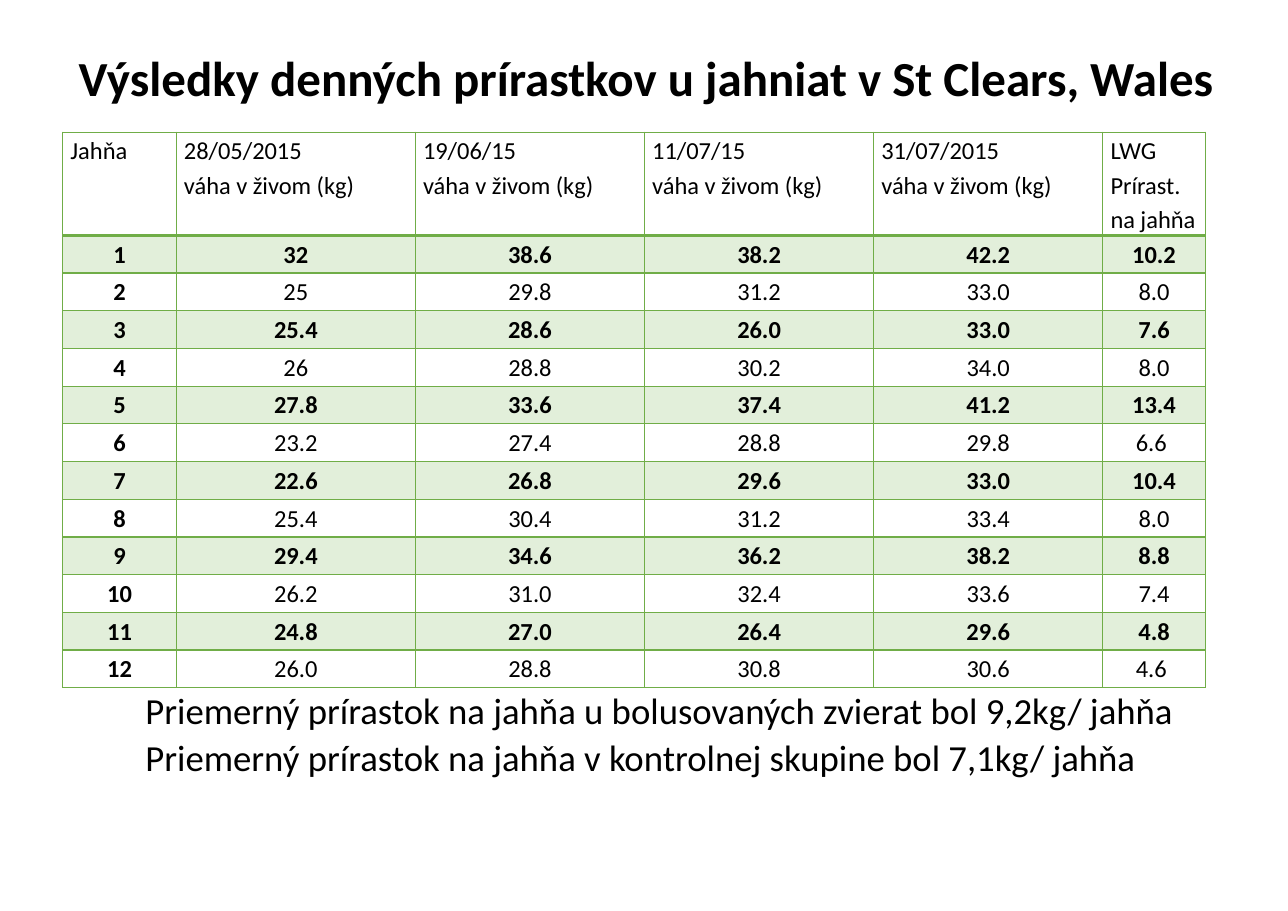
from lxml.etree import SubElement
from pptx import Presentation
from pptx.dml.color import RGBColor
from pptx.enum.text import MSO_ANCHOR, MSO_AUTO_SIZE, PP_ALIGN
from pptx.oxml.ns import qn
from pptx.util import Inches, Pt

TITLE = "Výsledky denných prírastkov u jahniat v St Clears, Wales"
HEADERS = [
    "Jahňa",
    "28/05/2015\nváha v živom (kg)",
    "19/06/15\nváha v živom (kg)",
    "11/07/15\nváha v živom (kg)",
    "31/07/2015\nváha v živom (kg)",
    "LWG Prírast. na jahňa",
]
LAMBS = [
    ("1", "32", "38.6", "38.2", "42.2", "10.2"),
    ("2", "25", "29.8", "31.2", "33.0", "8.0"),
    ("3", "25.4", "28.6", "26.0", "33.0", "7.6"),
    ("4", "26", "28.8", "30.2", "34.0", "8.0"),
    ("5", "27.8", "33.6", "37.4", "41.2", "13.4"),
    ("6", "23.2", "27.4", "28.8", "29.8", "6.6 "),
    ("7", "22.6", "26.8", "29.6", "33.0", "10.4"),
    ("8", "25.4", "30.4", "31.2", "33.4", "8.0"),
    ("9", "29.4", "34.6", "36.2", "38.2", "8.8"),
    ("10", "26.2", "31.0", "32.4", "33.6", "7.4"),
    ("11", "24.8", "27.0", "26.4", "29.6", "4.8"),
    ("12", "26.0", "28.8", "30.8", "30.6", "4.6 "),
]
SUMMARY = [
    "Priemerný prírastok na jahňa u bolusovaných zvierat bol 9,2kg/ jahňa",
    "Priemerný prírastok na jahňa v kontrolnej skupine bol 7,1kg/ jahňa",
]
COLORS = {"text": "000000", "border": "70AD47", "band": "E2EFDA"}
COLUMN_WIDTHS = [1.03, 2.17, 2.08, 2.08, 2.08, 0.93]
TABLE_HEIGHT, HEADER_HEIGHT = 5.02, 0.91
CELL_FORMAT = {
    "margin_left": Inches(0.07), "margin_right": Inches(0.07),
    "margin_top": 0, "margin_bottom": 0, "vertical_anchor": MSO_ANCHOR.TOP,
}


def set_attributes(target, values):
    for name, value in values.items():
        setattr(target, name, value)


def place(shape, left, top, width, height):
    set_attributes(shape, {"left": Inches(left), "top": Inches(top),
                           "width": Inches(width), "height": Inches(height)})


def format_paragraph(paragraph, size, bold=False, **layout):
    set_attributes(paragraph, layout)
    set_attributes(paragraph.font, {"name": "Calibri", "size": Pt(size), "bold": bold})
    paragraph.font.color.rgb = RGBColor.from_string(COLORS["text"])


def add_borders(cell, bottom_width=1, top_width=1):
    properties = cell._tc.get_or_add_tcPr()
    for side, width in (("L", 1), ("R", 1), ("T", top_width), ("B", bottom_width)):
        line = SubElement(properties, qn(f"a:ln{side}"), w=str(Pt(width)))
        fill = SubElement(line, qn("a:solidFill"))
        SubElement(fill, qn("a:srgbClr"), val=COLORS["border"])


def add_title(slide):
    title = slide.shapes.title
    place(title, 0.57, 0.38, 10.6, 0.64)
    title.text = TITLE
    set_attributes(title.text_frame, {"word_wrap": False, "vertical_anchor": MSO_ANCHOR.TOP,
                                      "auto_size": MSO_AUTO_SIZE.NONE})
    format_paragraph(title.text_frame.paragraphs[0], 32, True, alignment=PP_ALIGN.CENTER)


def add_weight_table(slide):
    rows = [HEADERS, *LAMBS]
    table = slide.shapes.add_table(
        len(rows), len(HEADERS), Inches(0.57), Inches(1.2),
        Inches(sum(COLUMN_WIDTHS)), Inches(TABLE_HEIGHT)).table
    set_attributes(table, {"first_row": False, "horz_banding": False})
    for column, width in zip(table.columns, COLUMN_WIDTHS):
        column.width = Inches(width)
    lamb_height = (TABLE_HEIGHT - HEADER_HEIGHT) / len(LAMBS)
    for row_index, values in enumerate(rows):
        is_header, is_banded = row_index == 0, row_index % 2 == 1
        table.rows[row_index].height = Inches(HEADER_HEIGHT if is_header else lamb_height)
        for column_index, value in enumerate(values):
            cell = table.cell(row_index, column_index)
            cell.text = value
            set_attributes(cell, CELL_FORMAT)
            add_borders(cell, bottom_width=2 if is_header else 1,
                        top_width=2 if row_index == 1 else 1)
            if is_banded:
                cell.fill.solid()
                cell.fill.fore_color.rgb = RGBColor.from_string(COLORS["band"])
            else:
                cell.fill.background()
            bold = is_banded or (column_index == 0 and not is_header)
            alignment = PP_ALIGN.LEFT if is_header else PP_ALIGN.CENTER
            for paragraph in cell.text_frame.paragraphs:
                format_paragraph(paragraph, 16, bold, alignment=alignment, line_spacing=1.15)


def add_summary(slide):
    body = slide.placeholders[1]
    place(body, 1.22, 6.24, 9.73, 1.35)
    body.text = "\n".join(SUMMARY)
    set_attributes(body.text_frame, {"word_wrap": True, "vertical_anchor": MSO_ANCHOR.TOP,
                                     "auto_size": MSO_AUTO_SIZE.NONE})
    for index, paragraph in enumerate(body.text_frame.paragraphs):
        properties = paragraph._p.get_or_add_pPr()
        properties.set("marL", "0")
        properties.set("indent", "0")
        SubElement(properties, qn("a:buNone"))
        format_paragraph(paragraph, 24, alignment=PP_ALIGN.LEFT, line_spacing=0.9,
                         space_before=Pt(4.8 if index else 0))


def main():
    presentation = Presentation()
    set_attributes(presentation, {"slide_width": Inches(11.69), "slide_height": Inches(8.27)})
    slide = presentation.slides.add_slide(presentation.slide_layouts[1])
    add_title(slide)
    add_weight_table(slide)
    add_summary(slide)
    presentation.save("out.pptx")


if __name__ == "__main__":
    main()
